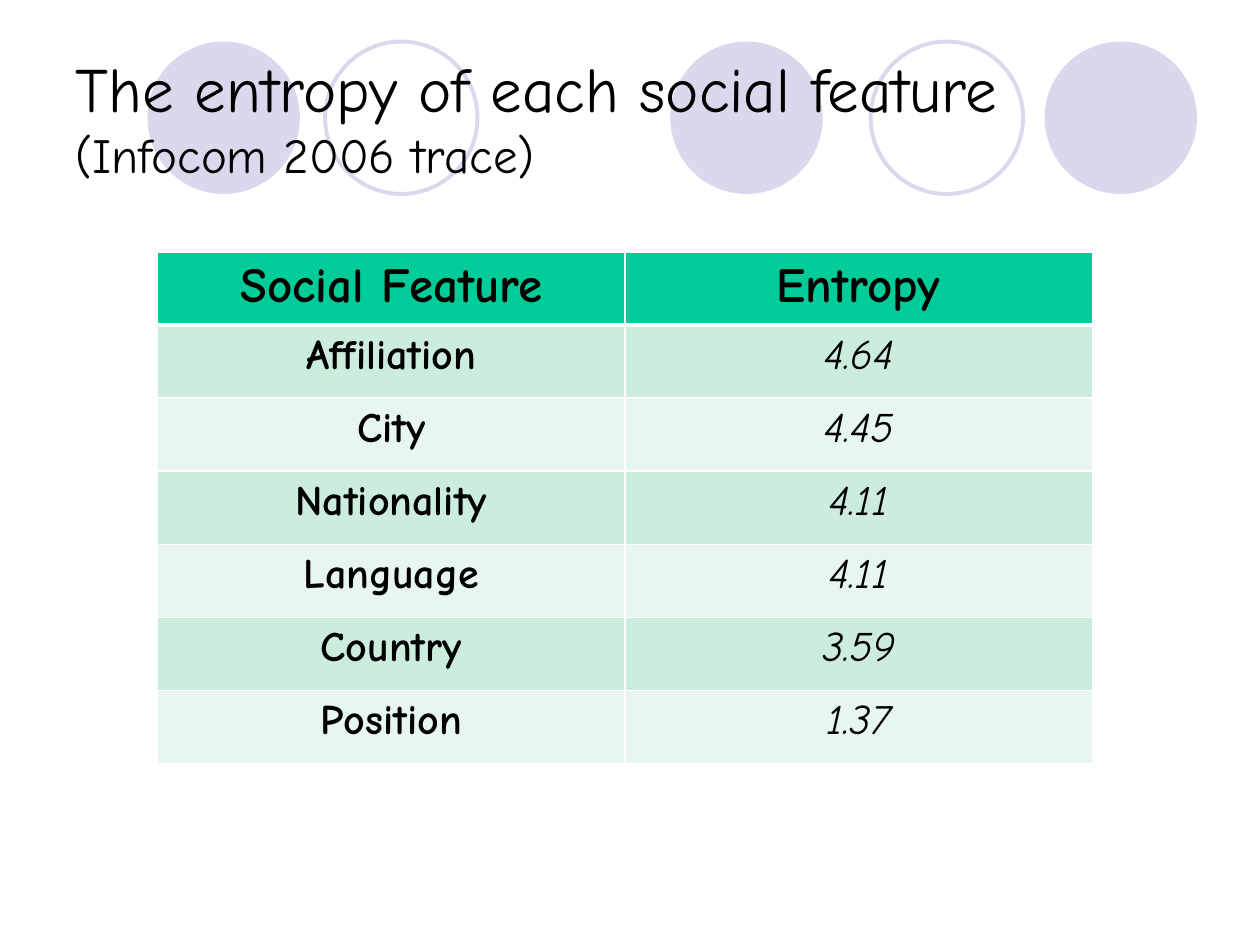
import pptx
import pptx.util
from lxml import etree
from pptx.dml.color import RGBColor
from pptx.enum.shapes import MSO_SHAPE
from pptx.enum.text import MSO_ANCHOR, MSO_AUTO_SIZE, PP_ALIGN
from pptx.oxml.ns import qn
from pptx.util import Inches

FONT = "Comic Neue"
COLORS = {
    "text": "000000",
    "circle": "D9D8EC",
    "header": "00CC99",
    "odd": "CCECDE",
    "even": "E7F6EF",
    "border": "FFFFFF",
}
CIRCLES = [(5.32, True), (8.29, True), (1.17, True), (6.91, False), (2.58, False)]
ROWS = [
    ("Social Feature", "Entropy"),
    ("Affiliation", "4.64"),
    ("City", "4.45"),
    ("Nationality", "4.11"),
    ("Language", "4.11"),
    ("Country", "3.59"),
    ("Position", "1.37"),
]


def color(name):
    return RGBColor.from_string(COLORS[name])


def add_run(p, text, size, bold=False, italic=False):
    r = p.add_run()
    r.text = text
    r.font.name = FONT
    r.font.size = pptx.util.Pt(size)
    r.font.bold = bold
    r.font.italic = italic
    r.font.color.rgb = color("text")


def add_circles(s, top, size):
    for left, filled in CIRCLES:
        sp = s.shapes.add_shape(MSO_SHAPE.OVAL, Inches(left), Inches(top),
                                Inches(size), Inches(size))
        sp.shadow.inherit = False
        if filled:
            sp.fill.solid()
            sp.fill.fore_color.rgb = color("circle")
            sp.line.fill.background()
        else:
            sp.fill.background()
            sp.line.color.rgb = color("circle")
            sp.line.width = pptx.util.Pt(2.25)


def add_title(s, left, top, width, height):
    sp = s.shapes.title
    sp.left, sp.top = Inches(left), Inches(top)
    sp.width, sp.height = Inches(width), Inches(height)
    # Bring the title in front of the circles
    s.shapes._spTree.append(sp._element)
    tf = sp.text_frame
    tf.word_wrap = True
    tf.auto_size = MSO_AUTO_SIZE.NONE
    tf.vertical_anchor = MSO_ANCHOR.MIDDLE
    p = tf.paragraphs[0]
    p.alignment = PP_ALIGN.LEFT
    add_run(p, "The entropy of each social feature ", 36)
    add_run(p, "(Infocom 2006 trace)", 28)


def set_borders(cell, widths):
    tcPr = cell._tc.get_or_add_tcPr()
    for i, (side, width) in enumerate(widths.items()):
        ln = etree.Element(qn("a:ln" + side), w=str(pptx.util.Pt(width)))
        fill = etree.SubElement(ln, qn("a:solidFill"))
        etree.SubElement(fill, qn("a:srgbClr"), val=COLORS["border"])
        tcPr.insert(i, ln)


def add_entropy_table(s, left, top, width, height):
    tbl = s.shapes.add_table(len(ROWS), len(ROWS[0]), Inches(left), Inches(top),
                             Inches(width), Inches(height)).table
    for i, row in enumerate(ROWS):
        header = i == 0
        band = "header" if header else "odd" if i % 2 else "even"
        for j, text in enumerate(row):
            cell = tbl.cell(i, j)
            cell.fill.solid()
            cell.fill.fore_color.rgb = color(band)
            set_borders(cell, {"L": 1, "R": 1, "T": 3 if i == 1 else 1,
                               "B": 3 if header else 1})
            p = cell.text_frame.paragraphs[0]
            p.alignment = PP_ALIGN.CENTER
            value = not header and j == 1
            add_run(p, text, 28 if header else 24, bold=not value, italic=value)


def main():
    prs = pptx.Presentation()
    prs.slide_width, prs.slide_height = Inches(10), Inches(7.5)
    s = prs.slides.add_slide(prs.slide_layouts[5])
    # Decorative circles, title, table
    add_circles(s, 0.33, 1.21)
    add_title(s, 0.5, 0.3, 9, 1.25)
    add_entropy_table(s, 1.25, 2, 7.42, 4.06)
    prs.save("out.pptx")


if __name__ == "__main__":
    main()
